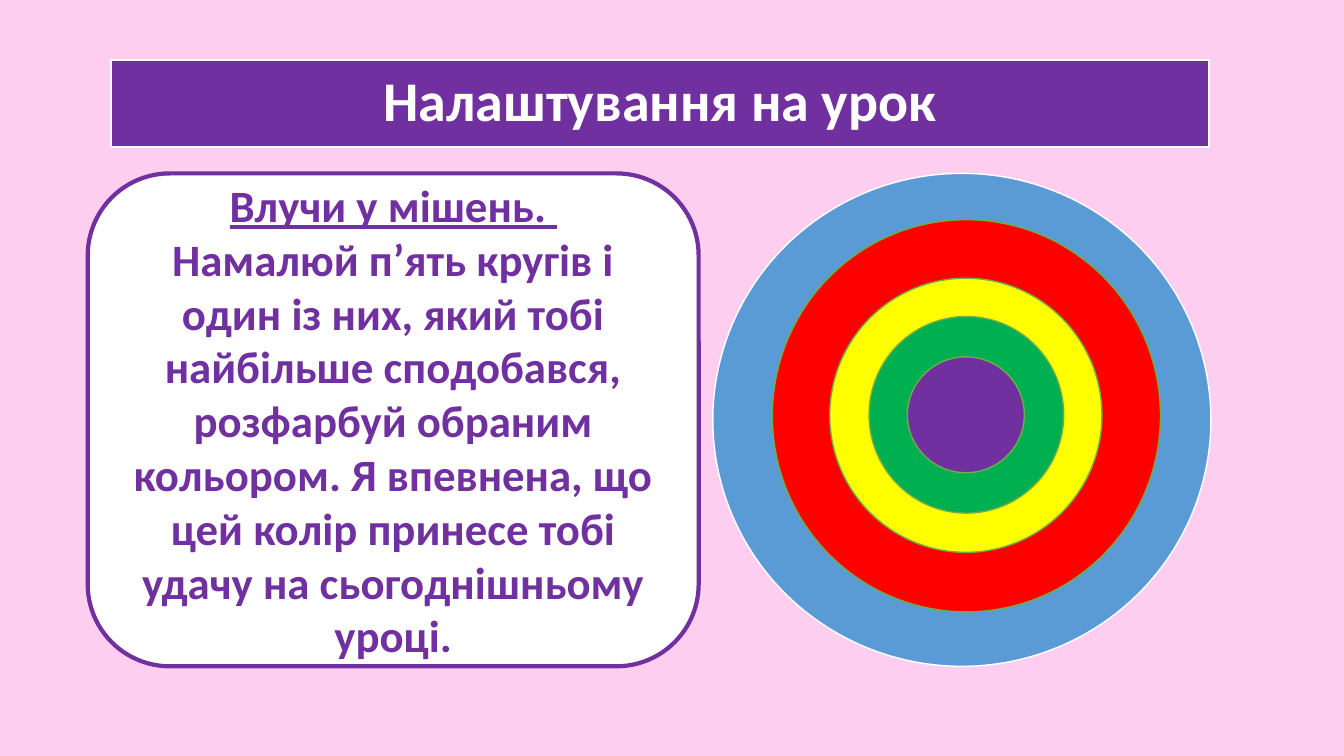
"""Build a lesson warm-up slide with a task card and a five-ring target."""
from pptx import Presentation
from pptx.dml.color import RGBColor
from pptx.enum.shapes import MSO_SHAPE
from pptx.enum.text import MSO_ANCHOR, PP_ALIGN
from pptx.util import Emu, Pt

RECTANGLE = MSO_SHAPE.RECTANGLE
ROUNDED = MSO_SHAPE.ROUNDED_RECTANGLE
OVAL = MSO_SHAPE.OVAL
MIDDLE = MSO_ANCHOR.MIDDLE
CENTER = PP_ALIGN.CENTER

EMU_PER_PX = 9144
SLIDE_SIZE = (1333, 750)
FONT = "Calibri"
COLORS = {
    "pink": "FECEF1",
    "purple": "7030A0",
    "white": "FFFFFF",
    "blue": "5B9BD5",
    "red": "FF0000",
    "yellow": "FFFF00",
    "green": "00B050",
    "outline": "70AD47",
}

TITLE = [("Налаштування на урок", False)]
TASK = [
    ("Влучи у мішень. ", True),
    ("Намалюй п’ять кругів і один із них, який тобі найбільше сподобався, "
     "розфарбуй обраним кольором. Я впевнена, що цей колір принесе тобі "
     "удачу на сьогоднішньому уроці.", False),
]
TITLE_BOX = (110, 60, 1089, 86)
TASK_BOX = (87, 172, 606, 489)
RINGS = [
    ((707, 172, 494, 489), "blue", "white"),
    ((766, 218, 385, 389), "red", "outline"),
    ((823, 276, 270, 272), "yellow", "outline"),
    ((862, 314, 193, 195), "green", "outline"),
    ((900, 354, 116, 115), "purple", "outline"),
]


def px(length):
    return Emu(length * EMU_PER_PX)


def rgb(name):
    return RGBColor.from_string(COLORS[name])


def add_figure(slide, kind, box, fill, line, line_width):
    figure = slide.shapes.add_shape(kind, *map(px, box))
    figure.shadow.inherit = False
    figure.fill.solid()
    figure.fill.fore_color.rgb = rgb(fill)
    figure.line.color.rgb = rgb(line)
    figure.line.width = Pt(line_width)
    return figure


def write(figure, paragraphs, size, color, spacing):
    frame = figure.text_frame
    frame.word_wrap = True
    frame.vertical_anchor = MIDDLE
    for index, (text, underlined) in enumerate(paragraphs):
        paragraph = frame.add_paragraph() if index else frame.paragraphs[0]
        paragraph.alignment = CENTER
        paragraph.line_spacing = spacing
        run = paragraph.add_run()
        run.text = text
        run.font.name = FONT
        run.font.size = Pt(size)
        run.font.bold = True
        run.font.underline = underlined
        run.font.color.rgb = rgb(color)


def main():
    deck = Presentation()
    deck.slide_width, deck.slide_height = map(px, SLIDE_SIZE)
    slide = deck.slides.add_slide(deck.slide_layouts[6])
    slide.background.fill.solid()
    slide.background.fill.fore_color.rgb = rgb("pink")

    banner = add_figure(slide, RECTANGLE, TITLE_BOX, "purple", "white", 1.5)
    write(banner, TITLE, 40, "white", 0.9)
    task_card = add_figure(slide, ROUNDED, TASK_BOX, "white", "purple", 3)
    write(task_card, TASK, 32, "purple", 1.0)
    for box, fill, line in RINGS:
        add_figure(slide, OVAL, box, fill, line, 1)

    deck.save("out.pptx")


if __name__ == "__main__":
    main()
